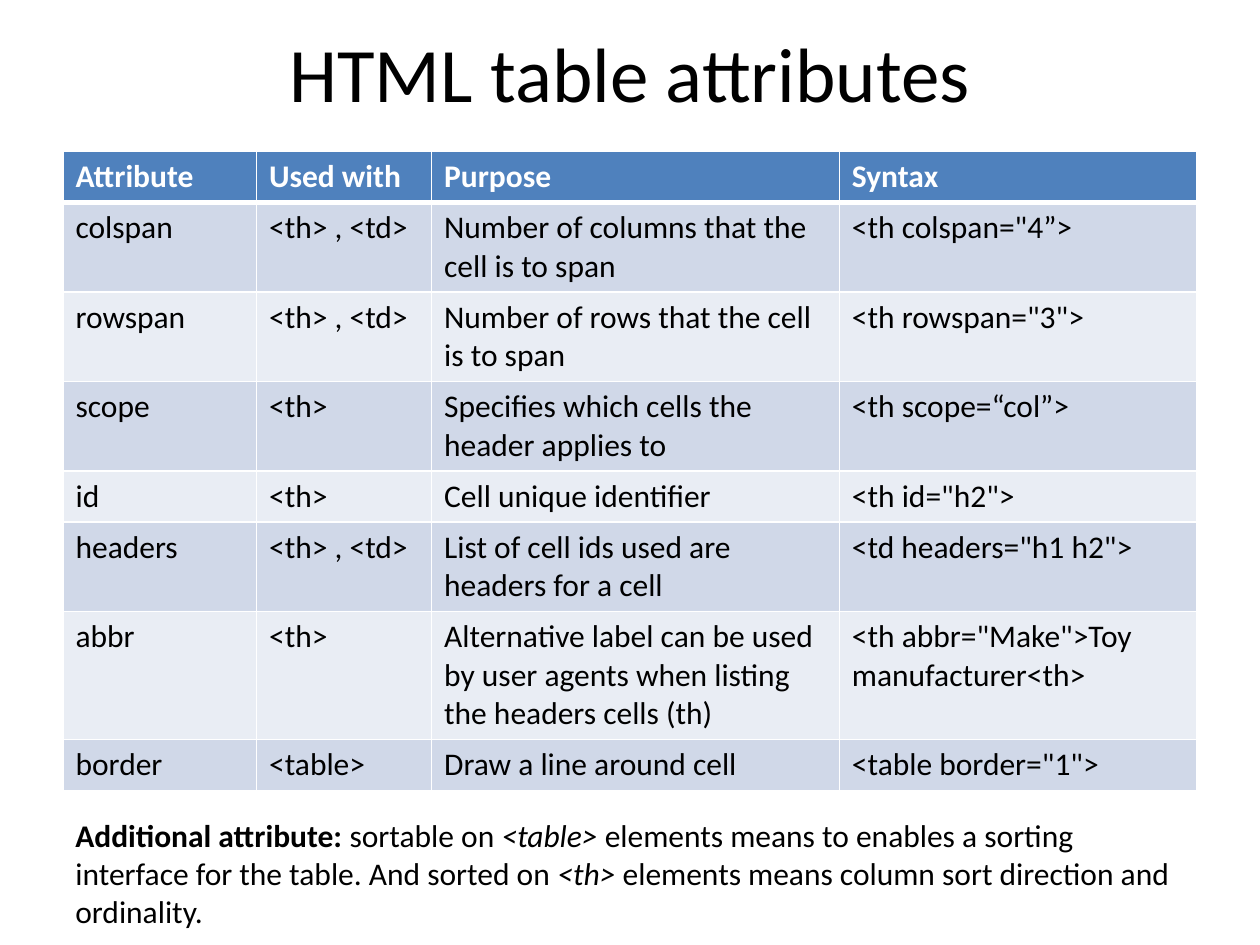
from lxml import etree
from pptx import Presentation
from pptx.dml.color import RGBColor
from pptx.enum.text import MSO_ANCHOR, PP_ALIGN
from pptx.oxml.ns import qn
from pptx.util import Cm, Pt

CENTER, LEFT = PP_ALIGN.CENTER, PP_ALIGN.LEFT
MIDDLE = MSO_ANCHOR.MIDDLE
TITLE_ONLY = 5

BLACK = RGBColor(0x00, 0x00, 0x00)
WHITE = RGBColor(0xFF, 0xFF, 0xFF)
HEADER_BLUE = RGBColor(0x4F, 0x81, 0xBD)
BANDS = (RGBColor(0xE9, 0xED, 0xF4), RGBColor(0xD0, 0xD8, 0xE8))

FONT = "Calibri"
MARGIN, CONTENT_WIDTH = Cm(1.27), Cm(22.86)
COLUMN_WIDTHS = (3.9, 3.53, 8.22, 7.21)
ROW_HEIGHT = Cm(1.03)

ROWS = (
    ("Attribute", "Used with", "Purpose", "Syntax"),
    ("colspan", "<th> , <td>", "Number of columns that the cell is to span",
     '<th colspan="4”>'),
    ("rowspan", "<th> , <td>", "Number of rows that the cell is to span",
     '<th rowspan="3">'),
    ("scope", "<th>", "Specifies which cells the header applies to",
     "<th scope=“col”>"),
    ("id", "<th>", "Cell unique identifier", '<th id="h2">'),
    ("headers", "<th> , <td>", "List of cell ids used are headers for a cell",
     '<td headers="h1 h2">'),
    ("abbr", "<th>",
     "Alternative label can be used by user agents when listing the headers cells (th)",
     '<th abbr="Make">Toy manufacturer<th>'),
    ("border", "<table>", "Draw a line around cell", '<table border="1">'),
)

# Each part of the note: text, bold, italic
NOTE_PARTS = (
    ("Additional attribute:", True, False),
    (" sortable on ", False, False),
    ("<table>", False, True),
    (" elements means to enables a sorting interface for the table. And sorted on ",
     False, False),
    ("<th>", False, True),
    (" elements means column sort direction and ordinality.", False, False),
)


def add_text(paragraph, text, size=18, color=BLACK, bold=False, italic=False,
             align=LEFT):
    paragraph.alignment = align
    run = paragraph.add_run()
    run.text = text
    font = run.font
    font.name, font.size = FONT, Pt(size)
    font.bold, font.italic = bold, italic
    font.color.rgb = color


def set_borders(cell, top=1, bottom=1):
    """Draw white cell borders; call before filling the cell."""
    properties = cell._tc.get_or_add_tcPr()
    for side, width in (("L", 1), ("R", 1), ("T", top), ("B", bottom)):
        line = etree.SubElement(properties, qn(f"a:ln{side}"), w=str(Pt(width)))
        fill = etree.SubElement(line, qn("a:solidFill"))
        etree.SubElement(fill, qn("a:srgbClr"), val=str(WHITE))


def add_title(slide, text):
    title = slide.shapes.title
    title.left, title.top = MARGIN, Cm(-0.15)
    title.width, title.height = CONTENT_WIDTH, Cm(3.18)
    title.text_frame.vertical_anchor = MIDDLE
    add_text(title.text_frame.paragraphs[0], text, size=44, align=CENTER)


def add_attribute_table(slide):
    table = slide.shapes.add_table(
        len(ROWS), len(COLUMN_WIDTHS), MARGIN, Cm(3.05),
        CONTENT_WIDTH, ROW_HEIGHT * len(ROWS)).table
    for column, width in zip(table.columns, COLUMN_WIDTHS):
        column.width = Cm(width)
    for row_index, texts in enumerate(ROWS):
        table.rows[row_index].height = ROW_HEIGHT
        header = row_index == 0
        for column_index, text in enumerate(texts):
            cell = table.cell(row_index, column_index)
            set_borders(cell, top=3 if row_index == 1 else 1,
                        bottom=3 if header else 1)
            cell.fill.solid()
            cell.fill.fore_color.rgb = HEADER_BLUE if header else BANDS[row_index % 2]
            add_text(cell.text_frame.paragraphs[0], text, bold=header,
                     color=WHITE if header else BLACK)


def add_note(slide):
    box = slide.shapes.add_textbox(MARGIN, Cm(16.33), CONTENT_WIDTH, Cm(2.57))
    box.text_frame.word_wrap = True
    for text, bold, italic in NOTE_PARTS:
        add_text(box.text_frame.paragraphs[0], text, bold=bold, italic=italic)


def main():
    presentation = Presentation()
    presentation.slide_width, presentation.slide_height = Cm(25.4), Cm(19.05)
    slide = presentation.slides.add_slide(presentation.slide_layouts[TITLE_ONLY])
    add_title(slide, "HTML table attributes")
    add_attribute_table(slide)
    add_note(slide)
    presentation.save("out.pptx")


if __name__ == "__main__":
    main()
